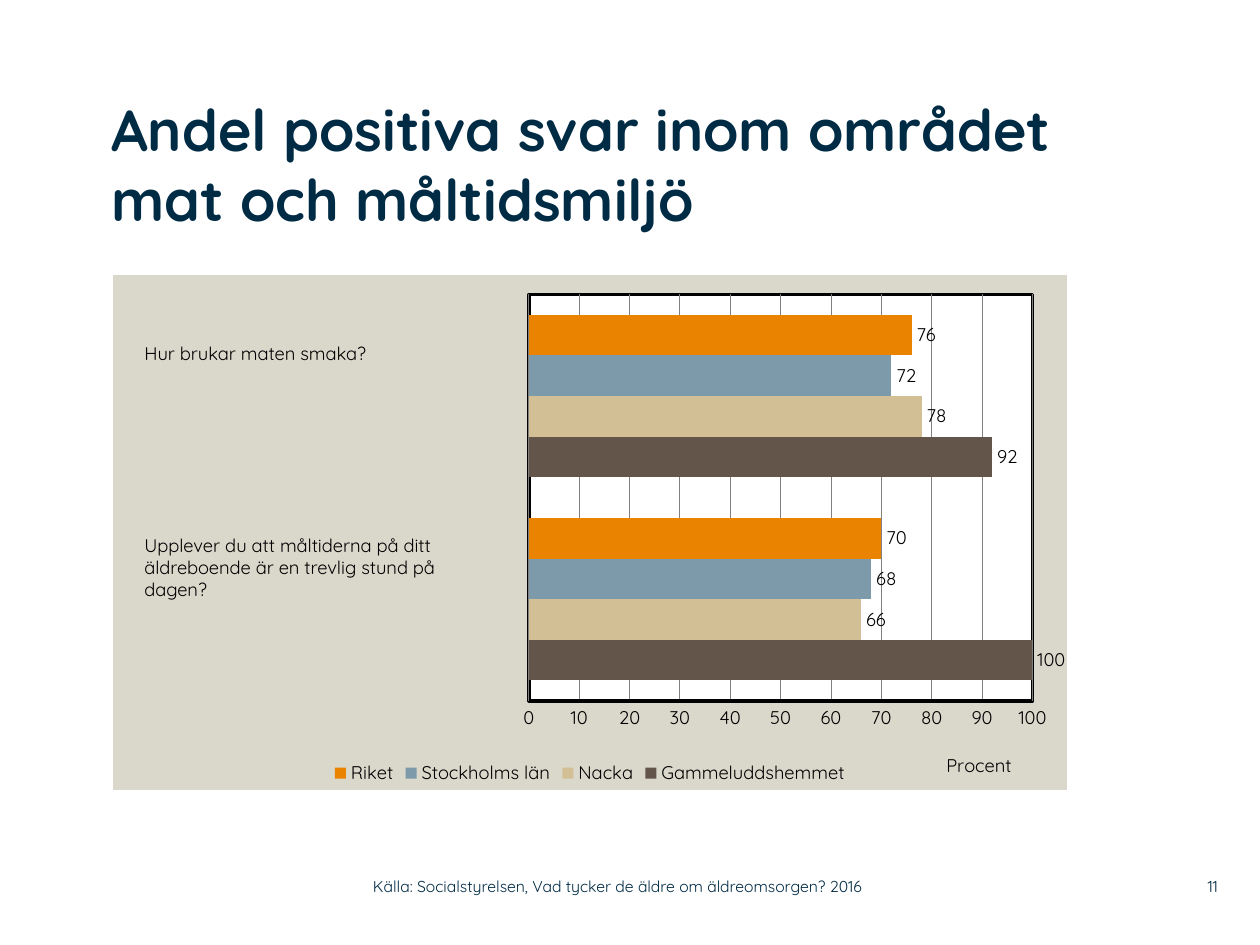
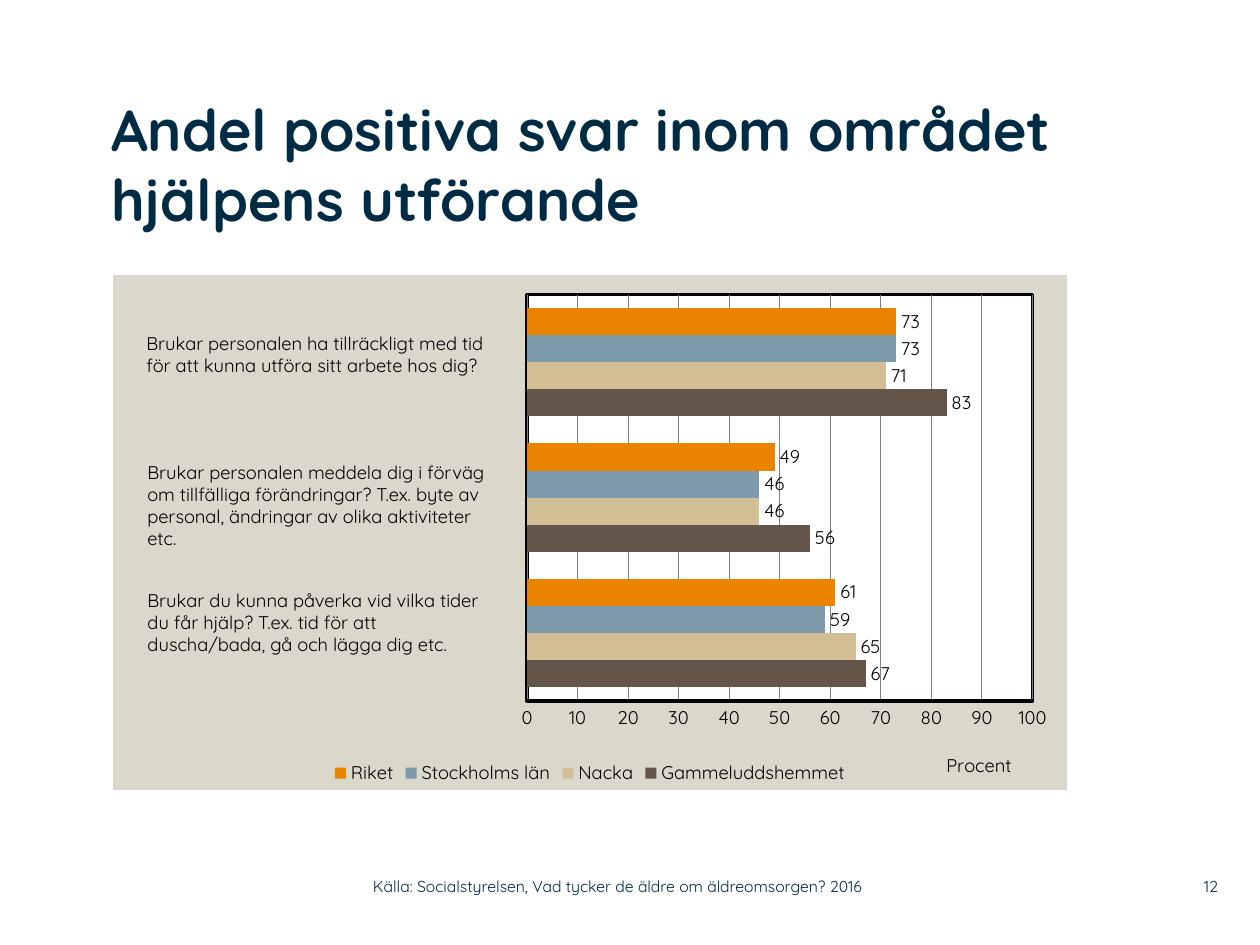
from lxml import etree
from pptx import Presentation
from pptx.chart.data import CategoryChartData
from pptx.dml.color import RGBColor
from pptx.enum.chart import XL_CHART_TYPE, XL_LABEL_POSITION, XL_LEGEND_POSITION, XL_TICK_MARK
from pptx.enum.text import MSO_ANCHOR, MSO_AUTO_SIZE, PP_ALIGN
from pptx.oxml import parse_xml
from pptx.oxml.ns import nsdecls, qn
from pptx.util import Emu, Pt

BAR_CLUSTERED = XL_CHART_TYPE.BAR_CLUSTERED
OUTSIDE_END = XL_LABEL_POSITION.OUTSIDE_END
LEGEND_BOTTOM = XL_LEGEND_POSITION.BOTTOM
NO_TICKS = XL_TICK_MARK.NONE
TOP, MIDDLE = MSO_ANCHOR.TOP, MSO_ANCHOR.MIDDLE
LEFT, RIGHT = PP_ALIGN.LEFT, PP_ALIGN.RIGHT
NO_AUTOFIT = MSO_AUTO_SIZE.NONE

FONT = "Quicksand"
NAVY, BLACK, WHITE = "002B45", "000000", "FFFFFF"
PANEL, GRID = "DAD7CB", "808080"
SERIES_COLORS = {"Gammeluddshemmet": "635549", "Nacka": "D3BF96",
                 "Stockholms län": "7D9AAA", "Riket": "E98300"}
SOURCE = "Källa: Socialstyrelsen, Vad tycker de äldre om äldreomsorgen? 2016"


def px(length):
    """126 px to the inch."""
    return Emu(round(length * 914400 / 126))


def rgb(color):
    return RGBColor.from_string(color)


def shape_properties(fill, line=""):
    """Fill and line for the chart parts that python-pptx does not reach."""
    outline = "<a:noFill/>"
    if line:
        outline = f'<a:solidFill><a:srgbClr val="{line}"/></a:solidFill>'
    return parse_xml(
        f'<c:spPr {nsdecls("c", "a")}><a:solidFill><a:srgbClr val="{fill}"/></a:solidFill>'
        f'<a:ln w="{Pt(2)}">{outline}</a:ln></c:spPr>')


def manual_layout(target="", **values):
    """Layout in fractions of the chart: x, y and, if given, w and h."""
    layout = etree.Element(qn("c:layout"))
    manual = etree.SubElement(layout, qn("c:manualLayout"))
    settings = {"layoutTarget": target} if target else {}
    settings.update(xMode="edge", yMode="edge", **values)
    for name, value in settings.items():
        etree.SubElement(manual, qn(f"c:{name}")).set("val", str(value))
    return layout


class Deck:
    def __init__(self):
        self.presentation = Presentation()
        self.presentation.slide_width = px(1260)
        self.presentation.slide_height = px(945)
        self.slide = None

    def style(self, font, size, color, bold=False):
        font.name, font.size, font.bold = FONT, Pt(size), bold
        font.color.rgb = rgb(color)

    def fill_text(self, shape, lines, size, color, bold=False, align=LEFT, anchor=TOP, inset=True):
        frame = shape.text_frame
        frame.text = "\n".join(lines)
        frame.word_wrap = True
        frame.auto_size = NO_AUTOFIT
        frame.vertical_anchor = anchor
        if not inset:
            frame.margin_left = frame.margin_right = frame.margin_top = frame.margin_bottom = 0
        for paragraph in frame.paragraphs:
            paragraph.alignment = align
            for run in paragraph.runs:
                self.style(run.font, size, color, bold)

    def text(self, box, lines, size=10.5, color=BLACK, **options):
        shape = self.slide.shapes.add_textbox(*map(px, box))
        self.fill_text(shape, lines, size, color, **options)

    def new_slide(self, title, title_width, number):
        layout = self.presentation.slide_layouts.get_by_name("Title Only")
        self.slide = self.presentation.slides.add_slide(layout)
        shape = self.slide.shapes.title
        shape.left, shape.top, shape.width, shape.height = map(px, (111, 94, title_width, 179))
        self.fill_text(shape, [title], 33, NAVY, bold=True, inset=False)
        # Footer: source and slide number
        footer = dict(size=9, color=NAVY, anchor=MIDDLE, inset=False)
        self.text((373, 868, 558, 37), [SOURCE], **footer)
        self.text((1159, 868, 59, 37), [str(number)], align=RIGHT, **footer)

    def bar_chart(self, values, plot_left):
        data = CategoryChartData()
        count = len(next(iter(values.values())))
        data.categories = [str(index + 1) for index in range(count)]
        for name, numbers in values.items():
            data.add_series(name, numbers)
        chart = self.slide.shapes.add_chart(BAR_CLUSTERED, *map(px, (113, 275, 954, 515)), data).chart
        self.style(chart.font, 10.5, BLACK)
        chart.has_title = False
        chart.has_legend = True
        chart.legend.position = LEGEND_BOTTOM
        chart.legend.include_in_layout = False
        self.style(chart.legend.font, 10.5, BLACK)

        # Bars and their values
        plot = chart.plots[0]
        plot.gap_width, plot.overlap, plot.vary_by_categories = 100, 0, False
        for series in plot.series:
            series.format.fill.solid()
            series.format.fill.fore_color.rgb = rgb(SERIES_COLORS[series.name])
            labels = series.data_labels
            labels.show_value = True
            labels.position = OUTSIDE_END
            self.style(labels.font, 10.5, BLACK)

        # Axes
        chart.category_axis.visible = False
        axis = chart.value_axis
        axis.minimum_scale, axis.maximum_scale, axis.major_unit = 0, 100, 10
        axis.major_tick_mark = axis.minor_tick_mark = NO_TICKS
        axis.format.line.width = Pt(2)
        axis.format.line.color.rgb = rgb(BLACK)
        axis.major_gridlines.format.line.width = Pt(0.5)
        axis.major_gridlines.format.line.color.rgb = rgb(GRID)
        self.style(axis.tick_labels.font, 10.5, BLACK)
        axis_title = axis.axis_title
        axis_title.text_frame.text = "Procent"
        self.style(axis_title.text_frame.paragraphs[0].runs[0].font, 10.5, BLACK)
        title_xml = axis_title._element
        for layout in title_xml.findall(qn("c:layout")):
            title_xml.remove(layout)
        title_xml.find(qn("c:tx")).addnext(manual_layout(x=0.87, y=0.92))

        # Panel and plot area
        chart_xml = chart._chartSpace.find(qn("c:chart"))
        chart_xml.addnext(shape_properties(PANEL))
        plot_xml = chart_xml.find(qn("c:plotArea"))
        for layout in plot_xml.findall(qn("c:layout")):
            plot_xml.remove(layout)
        plot_xml.insert(0, manual_layout("inner", x=plot_left, y=0.038,
                                         w=round(0.964 - plot_left, 3), h=0.789))
        plot_xml.append(shape_properties(WHITE, BLACK))


def main():
    deck = Deck()

    # Food and mealtimes
    deck.new_slide("Andel positiva svar inom området mat och måltidsmiljö", 1061, 11)
    deck.bar_chart({"Gammeluddshemmet": (100, 92), "Nacka": (66, 78),
                    "Stockholms län": (68, 72), "Riket": (70, 76)}, 0.436)
    deck.text((132, 336, 374, 35), ["Hur brukar maten smaka?"])
    deck.text((132, 528, 369, 79), [
        "Upplever du att måltiderna på ditt äldreboende är en trevlig stund på", "dagen?"])

    # How the help is carried out
    deck.new_slide("Andel positiva svar inom området hjälpens utförande", 958, 12)
    deck.bar_chart({"Gammeluddshemmet": (67, 56, 83), "Nacka": (65, 46, 71),
                    "Stockholms län": (59, 46, 73), "Riket": (61, 49, 73)}, 0.434)
    deck.text((134, 326, 377, 57), ["Brukar personalen ha tillräckligt med tid",
                                    "för att kunna utföra sitt arbete hos dig?"])
    deck.text((135, 455, 374, 102), [
        "Brukar personalen meddela dig i förväg om tillfälliga förändringar? "
        "T.ex. byte av personal, ändringar av olika aktiviteter etc."])
    deck.text((135, 583, 374, 79), ["Brukar du kunna påverka vid vilka tider",
                                    "du får hjälp? T.ex. tid för att",
                                    "duscha/bada, gå och lägga dig etc."])

    deck.presentation.save("out.pptx")


if __name__ == "__main__":
    main()
